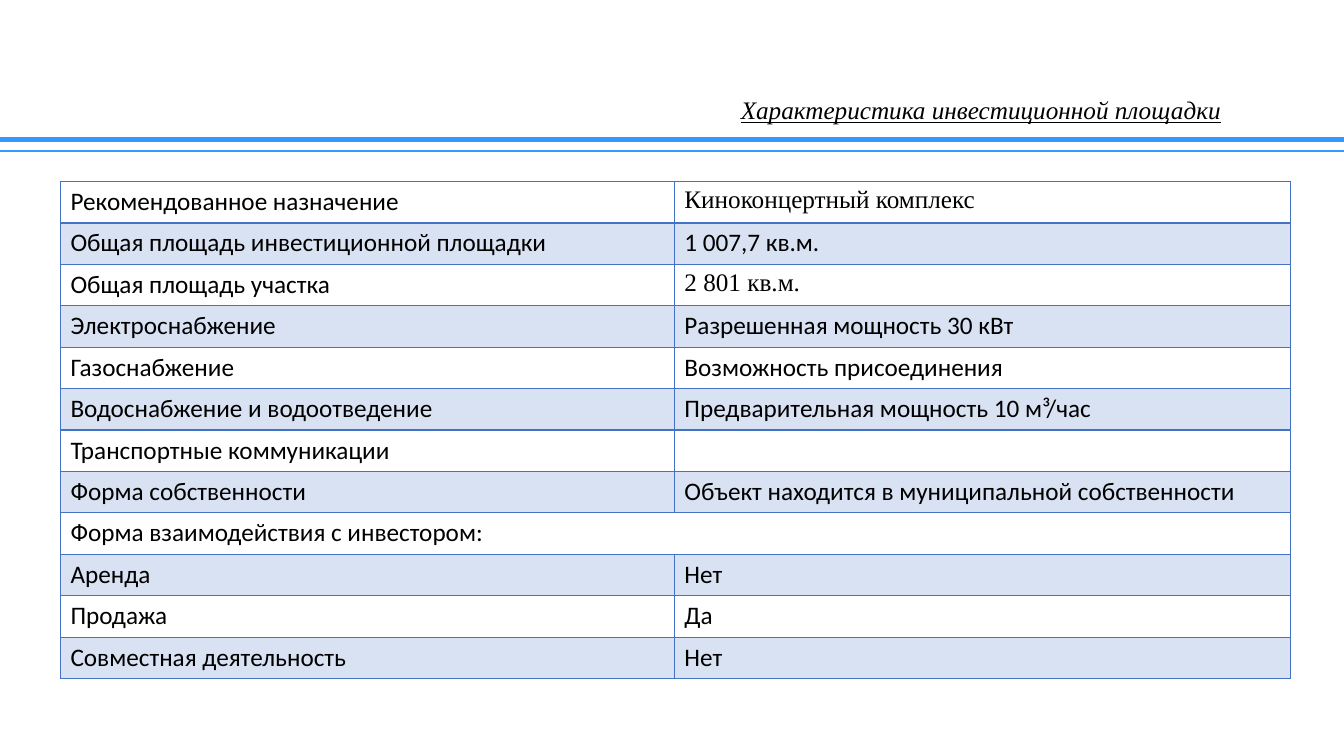
from dataclasses import dataclass

from lxml.etree import SubElement
from pptx import Presentation
from pptx.dml.color import RGBColor
from pptx.enum.shapes import MSO_CONNECTOR as Link
from pptx.enum.text import MSO_ANCHOR as Anchor, MSO_AUTO_SIZE as Fit, PP_ALIGN as Align
from pptx.oxml import parse_xml
from pptx.oxml.ns import nsdecls, qn
from pptx.util import Pt

WIDTH, HEIGHT = 960, 540
BLACK = RGBColor(0x00, 0x00, 0x00)
SKY = RGBColor(0x33, 0x99, 0xFF)
BLUE = RGBColor(0x44, 0x72, 0xC4)
SANS, SERIF = "Calibri", "Times New Roman"
SIZE = 18
ROW_H = 29.6
COLS = (438.5, 439.9)


@dataclass
class Rule:
    top: float
    weight: float


@dataclass
class Row:
    label: str
    value: str | None = ""  # None: the label spans both columns
    font: str = SANS


RULES = [Rule(99.4, 3.5), Rule(108, 1.5)]

ROWS = [
    Row("Рекомендованное назначение", "Киноконцертный комплекс", SERIF),
    Row("Общая площадь инвестиционной площадки", "1 007,7 кв.м."),
    Row("Общая площадь участка", "2 801 кв.м.", SERIF),
    Row("Электроснабжение", "Разрешенная мощность 30 кВт"),
    Row("Газоснабжение", "Возможность присоединения"),
    Row("Водоснабжение и водоотведение", "Предварительная мощность 10 м³/час"),
    Row("Транспортные коммуникации"),
    Row("Форма собственности", "Объект находится в муниципальной собственности"),
    Row("Форма взаимодействия с инвестором:", None),
    Row("Аренда", "Нет"),
    Row("Продажа", "Да"),
    Row("Совместная деятельность", "Нет"),
]


def add_run(para, text: str, face: str):
    run = para.add_run()
    run.text = text
    font = run.font
    font.name, font.size, font.bold = face, Pt(SIZE), False
    font.color.rgb = BLACK
    return run


def draw_rule(slide, rule: Rule) -> None:
    line = slide.shapes.add_connector(
        Link.STRAIGHT, Pt(0), Pt(rule.top), Pt(WIDTH), Pt(rule.top))
    line.line.color.rgb = SKY
    line.line.width = Pt(rule.weight)
    SubElement(line._element.spPr, qn("a:effectLst"))


def draw_title(slide, text: str) -> None:
    title = slide.shapes.title
    title.left, title.top = Pt(480), Pt(69.8)
    title.width, title.height = Pt(441.4), Pt(19.5)
    frame = title.text_frame
    frame.auto_size, frame.word_wrap = Fit.NONE, True
    frame.vertical_anchor = Anchor.MIDDLE
    para = frame.paragraphs[0]
    para.alignment, para.line_spacing = Align.CENTER, 0.9
    font = add_run(para, text, SERIF).font
    font.italic = font.underline = True


def set_edges(cell, head: bool) -> None:
    """Outline a cell; the head row has a heavier lower edge."""
    props = cell._tc.get_or_add_tcPr()
    for spot, side in enumerate("LRTB"):
        weight = Pt(2 if head and side == "B" else 1)
        props.insert(spot, parse_xml(
            f'<a:ln{side} {nsdecls("a")} w="{weight}"><a:solidFill>'
            f'<a:srgbClr val="{BLUE}"/></a:solidFill></a:ln{side}>'))


def set_fill(cell, band: bool) -> None:
    """Tint banded cells with 20 % blue and leave the others clear."""
    if not band:
        cell.fill.background()
        return
    cell.fill.solid()
    cell.fill.fore_color.rgb = BLUE
    tint = cell._tc.tcPr.find(f"{qn('a:solidFill')}/{qn('a:srgbClr')}")
    SubElement(tint, qn("a:alpha"), val="20000")


def draw_table(slide, rows: list[Row]) -> None:
    table = slide.shapes.add_table(
        len(rows), len(COLS), Pt(43.2), Pt(129.6),
        Pt(sum(COLS)), Pt(ROW_H * len(rows))).table
    table.first_row = table.horz_banding = False
    for col, width in zip(table.columns, COLS):
        col.width = Pt(width)
    for num, row in enumerate(rows):
        table.rows[num].height = Pt(ROW_H)
        pairs = ((row.label, SANS), (row.value, row.font))
        for cell, (text, face) in zip(table.rows[num].cells, pairs):
            set_fill(cell, num % 2 == 1)
            set_edges(cell, num == 0)
            if text:
                add_run(cell.text_frame.paragraphs[0], text, face)
        if row.value is None:
            table.cell(num, 0).merge(table.cell(num, 1))


def main() -> None:
    deck = Presentation()
    deck.slide_width, deck.slide_height = Pt(WIDTH), Pt(HEIGHT)
    slide = deck.slides.add_slide(deck.slide_layouts[5])
    for rule in RULES:
        draw_rule(slide, rule)
    draw_title(slide, "Характеристика инвестиционной площадки")
    draw_table(slide, ROWS)
    deck.save("out.pptx")


if __name__ == "__main__":
    main()
